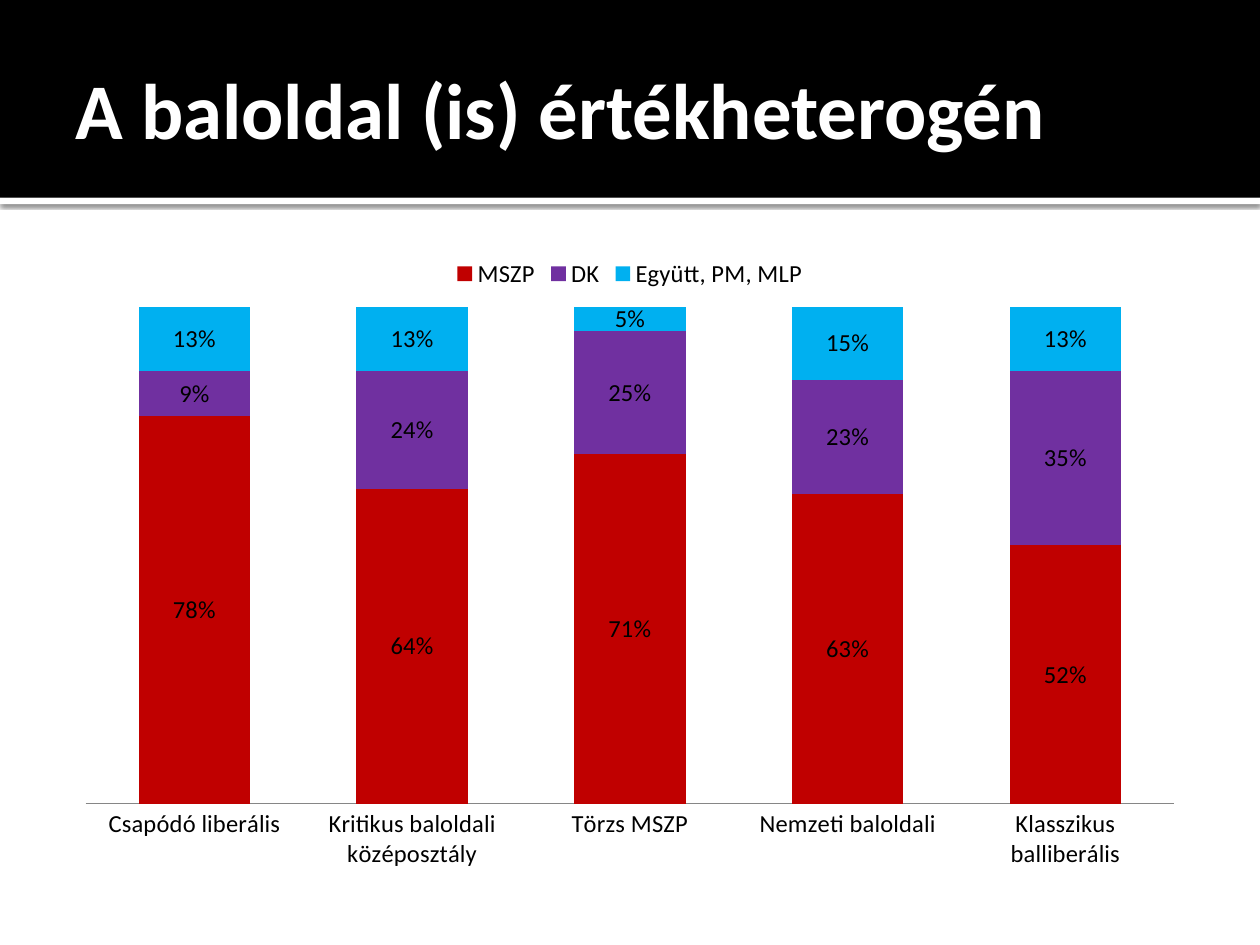
from dataclasses import dataclass

from lxml import etree
from pptx import Presentation
from pptx.chart.data import CategoryChartData
from pptx.dml.color import RGBColor
from pptx.enum.chart import XL_CHART_TYPE, XL_LABEL_POSITION, XL_LEGEND_POSITION, XL_TICK_MARK
from pptx.enum.shapes import MSO_SHAPE
from pptx.enum.text import MSO_ANCHOR, MSO_AUTO_SIZE, PP_ALIGN
from pptx.oxml.ns import qn
from pptx.util import Inches, Pt

RECTANGLE = MSO_SHAPE.RECTANGLE
STACKED = XL_CHART_TYPE.COLUMN_STACKED_100
CENTER_LABEL = XL_LABEL_POSITION.CENTER
TOP_LEGEND = XL_LEGEND_POSITION.TOP
NO_TICK = XL_TICK_MARK.NONE
MIDDLE = MSO_ANCHOR.MIDDLE
NO_FIT = MSO_AUTO_SIZE.NONE
LEFT = PP_ALIGN.LEFT
TITLE_ONLY = 5


@dataclass(frozen=True)
class Theme:
    """Colours, font and type sizes of the deck."""
    font: str = "Calibri"
    black: str = "000000"
    white: str = "FFFFFF"
    axis: str = "868686"
    title_size: int = 45
    chart_size: int = 14


THEME = Theme()
TITLE = "A baloldal (is) értékheterogén"
GROUPS = ["Csapódó liberális", "Kritikus baloldali középosztály", "Törzs MSZP",
          "Nemzeti baloldali", "Klasszikus balliberális"]
PARTIES = [
    ("MSZP", "C00000", (0.78, 0.64, 0.71, 0.63, 0.52)),
    ("DK", "7030A0", (0.09, 0.24, 0.25, 0.23, 0.35)),
    ("Együtt, PM, MLP", "00B0F0", (0.13, 0.13, 0.05, 0.15, 0.13)),
]


def rgb(value):
    """Turn a hex string into a colour."""
    return RGBColor.from_string(value)


def style_font(font, size, color):
    """Apply the theme font with a size and colour."""
    font.name = THEME.font
    font.size = Pt(size)
    font.color.rgb = rgb(color)


def add_bar(page, box, color):
    """Add a plain rectangle behind the title."""
    bar = page.shapes.add_shape(RECTANGLE, *box)
    bar.shadow.inherit = False
    bar.fill.solid()
    bar.fill.fore_color.rgb = rgb(color)
    bar.line.fill.background()
    page.shapes.title.element.addprevious(bar.element)
    return bar


def add_soft_shadow(shape):
    """Give a shape a short shadow straight below it."""
    effects = shape.element.spPr.find(qn("a:effectLst"))
    shadow = etree.SubElement(effects, qn("a:outerShdw"), blurRad=str(Pt(2.5)),
                              dist=str(Pt(0.8)), dir="5400000", algn="t", rotWithShape="0")
    color = etree.SubElement(shadow, qn("a:srgbClr"), val=THEME.black)
    etree.SubElement(color, qn("a:alpha"), val="60000")


def add_header(page, box):
    """Build the black band, its white edge and the title."""
    left, top, width, height = box
    edge = add_bar(page, (left, top + height, width, Inches(0.05)), THEME.white)
    add_soft_shadow(edge)
    add_bar(page, box, THEME.black)

    title = page.shapes.title
    margin = Inches(0.5)
    title.left, title.top = left + margin, top + Inches(0.17)
    title.width, title.height = width - 2 * margin, Inches(1.37)
    frame = title.text_frame
    frame.word_wrap = True
    frame.auto_size = NO_FIT
    frame.vertical_anchor = MIDDLE
    frame.margin_left = Inches(0.1)
    frame.margin_top = frame.margin_right = frame.margin_bottom = Inches(0.05)
    para = frame.paragraphs[0]
    para.alignment = LEFT
    span = para.add_run()
    span.text = TITLE
    span.font.bold = True
    style_font(span.font, THEME.title_size, THEME.white)


def add_party_chart(page, box):
    """Build the stacked column chart of party shares by group."""
    data = CategoryChartData(number_format="0%")
    data.categories = GROUPS
    for name, _, shares in PARTIES:
        data.add_series(name, shares)
    chart = page.shapes.add_chart(STACKED, *box, data).chart
    chart.has_title = False
    style_font(chart.font, THEME.chart_size, THEME.black)

    chart.has_legend = True
    chart.legend.position = TOP_LEGEND
    chart.legend.include_in_layout = False
    style_font(chart.legend.font, THEME.chart_size, THEME.black)

    chart.value_axis.visible = False
    chart.value_axis.has_major_gridlines = False
    chart.value_axis.tick_labels.number_format = "0%"
    chart.value_axis.tick_labels.number_format_is_linked = False
    groups = chart.category_axis
    groups.major_tick_mark = groups.minor_tick_mark = NO_TICK
    groups.format.line.color.rgb = rgb(THEME.axis)
    groups.format.line.width = Pt(0.75)
    style_font(groups.tick_labels.font, THEME.chart_size, THEME.black)

    plot = chart.plots[0]
    plot.gap_width = 95
    plot.overlap = 100
    plot.vary_by_categories = False
    for series, (_, color, _) in zip(plot.series, PARTIES):
        series.format.fill.solid()
        series.format.fill.fore_color.rgb = rgb(color)
        labels = series.data_labels
        labels.show_value = True
        labels.number_format = "0%"
        labels.number_format_is_linked = False
        labels.position = CENTER_LABEL
        style_font(labels.font, THEME.chart_size, THEME.black)


def main():
    """Build and save the deck."""
    deck = Presentation()
    deck.slide_width, deck.slide_height = Inches(10), Inches(7.5)
    page = deck.slides.add_slide(deck.slide_layouts[TITLE_ONLY])
    add_header(page, (0, 0, deck.slide_width, Inches(1.57)))
    add_party_chart(page, (Inches(0.5), Inches(1.94), Inches(9), Inches(5.06)))
    deck.save("out.pptx")


if __name__ == "__main__":
    main()
